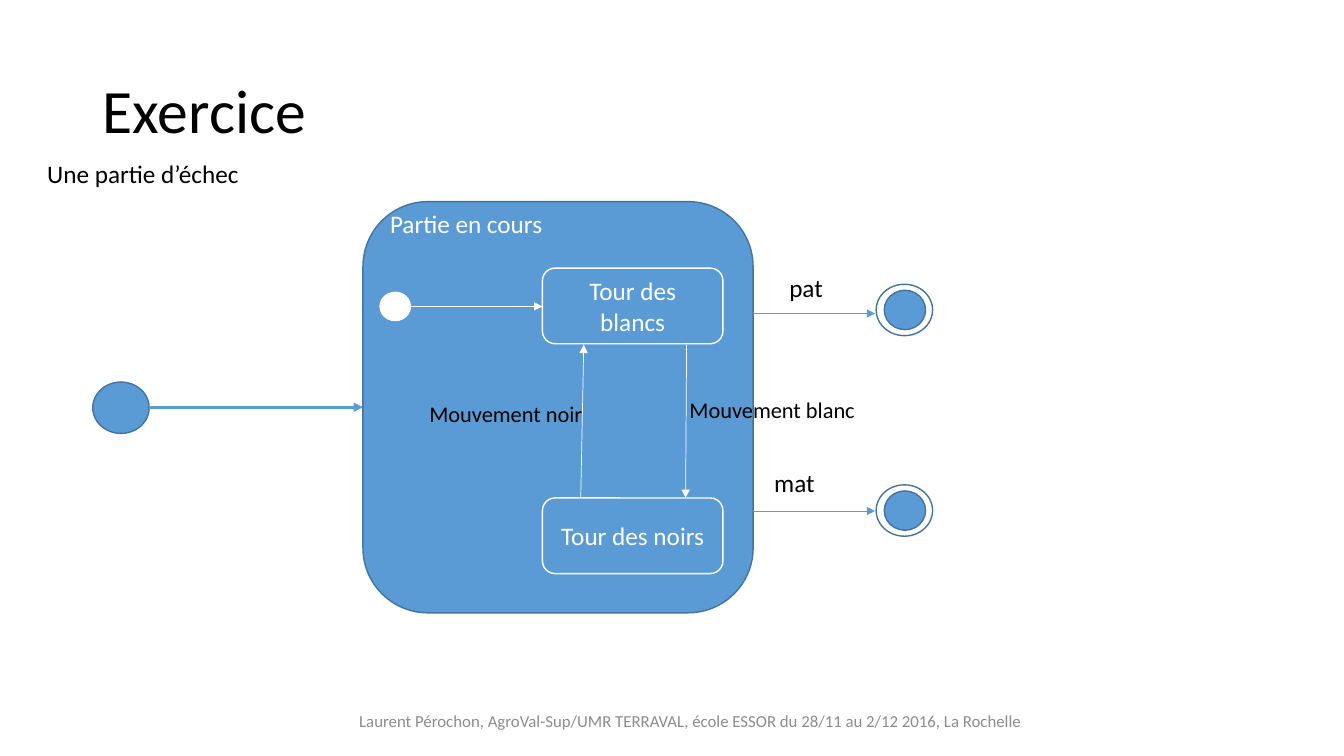
"""Build the slide with the state diagram of a chess game."""
import pptx
import pptx.dml.color
import pptx.enum.shapes
import pptx.enum.text
import pptx.oxml.ns
import pptx.util
from lxml import etree

Inches = pptx.util.Inches
SHAPE = pptx.enum.shapes.MSO_SHAPE
ALIGN = pptx.enum.text.PP_ALIGN
ANCHOR = pptx.enum.text.MSO_ANCHOR
BLUE, EDGE, WHITE, BLACK, GREY = "5B9BD5", "43739E", "FFFFFF", "000000", "8C8C8C"


def rgb(value):
    """Return the colour of a hex string."""
    return pptx.dml.color.RGBColor.from_string(value)


def set_all(obj, values):
    """Set each attribute of obj that the dict names."""
    for name, value in values.items():
        setattr(obj, name, value)


def write(sp, text, size, color, align=ALIGN.LEFT, anchor=ANCHOR.TOP, spacing=1.0):
    """Put one formatted paragraph into a shape."""
    tf = sp.text_frame
    set_all(tf, {"word_wrap": True, "vertical_anchor": anchor})
    p = tf.paragraphs[0]
    set_all(p, {"alignment": align, "line_spacing": spacing})
    r = p.add_run()
    r.text = text
    set_all(r.font, {"size": pptx.util.Pt(size), "name": "Calibri"})
    r.font.color.rgb = rgb(color)


def add_title(s, text, box):
    """Move and fill the title placeholder."""
    sp = s.shapes.title
    set_all(sp, dict(zip(("left", "top", "width", "height"), map(Inches, box))))
    write(sp, text, 44, BLACK, anchor=ANCHOR.MIDDLE, spacing=0.9)


def add_label(s, text, box, size=18, color=BLACK, **layout):
    """Add a text box."""
    write(s.shapes.add_textbox(*map(Inches, box)), text, size, color, **layout)


def add_node(s, kind, box, fill=BLUE, line=EDGE):
    """Add a preset shape, hollow when fill is None, and return it."""
    sp = s.shapes.add_shape(kind, *map(Inches, box))
    sp.shadow.inherit = False
    if fill:
        sp.fill.solid()
        sp.fill.fore_color.rgb = rgb(fill)
    else:
        sp.fill.background()
    sp.line.color.rgb = rgb(line)
    sp.line.width = pptx.util.Pt(1)
    return sp


def add_turn(s, text, top):
    """Add the state of one player's turn."""
    sp = add_node(s, SHAPE.ROUNDED_RECTANGLE, (5.38, top, 1.79, 0.75), line=WHITE)
    write(sp, text, 18, WHITE, ALIGN.CENTER, ANCHOR.MIDDLE)


def add_final(s, top):
    """Add a final state: a disc inside a ring."""
    add_node(s, SHAPE.OVAL, (8.77, top + 0.06, 0.41, 0.39))
    add_node(s, SHAPE.OVAL, (8.69, top, 0.56, 0.51), fill=None)


def add_arrow(s, ends, color, width=0.5):
    """Add a straight arrow from (x1, y1) to (x2, y2)."""
    cx = s.shapes.add_connector(pptx.enum.shapes.MSO_CONNECTOR.STRAIGHT, *map(Inches, ends))
    cx.line.color.rgb = rgb(color)
    cx.line.width = pptx.util.Pt(width)
    qn = pptx.oxml.ns.qn
    sppr = cx._element.spPr
    etree.SubElement(sppr.find(qn("a:ln")), qn("a:tailEnd"), type="triangle")
    etree.SubElement(sppr, qn("a:effectLst"))


def main():
    """Build and save the slide."""
    prs = pptx.Presentation()
    set_all(prs, {"slide_width": Inches(13.33), "slide_height": Inches(7.5)})
    s = prs.slides.add_slide(prs.slide_layouts[5])

    add_title(s, "Exercice", (0.92, 0.4, 11.5, 1.45))
    add_label(s, "Laurent Pérochon, AgroVal-Sup/UMR TERRAVAL, école ESSOR du 28/11 au 2/12 2016, La Rochelle",
              (2.3, 6.95, 9.1, 0.4), 12, GREY, align=ALIGN.CENTER, anchor=ANCHOR.MIDDLE)

    add_node(s, SHAPE.OVAL, (0.92, 3.79, 0.56, 0.51))
    add_arrow(s, (1.48, 4.04, 3.6, 4.04), BLUE, 2.25)
    add_node(s, SHAPE.ROUNDED_RECTANGLE, (3.6, 2, 3.87, 4.08))
    add_label(s, "Partie en cours", (3.77, 2.02, 2.26, 0.51), color=WHITE)

    add_node(s, SHAPE.OVAL, (3.77, 2.9, 0.3, 0.28), WHITE, WHITE)
    add_turn(s, "Tour des blancs", 2.66)
    add_turn(s, "Tour des noirs", 4.94)
    for ends in ((4.07, 3.04, 5.38, 3.04), (6.81, 3.42, 6.8, 4.94), (5.76, 4.94, 5.79, 3.42)):
        add_arrow(s, ends, WHITE)

    for text, box, y, top in (("pat", (7.73, 2.65, 0.7, 0.51), 3.11, 2.82),
                              ("mat", (7.58, 4.59, 0.79, 0.51), 5.07, 4.81)):
        add_label(s, text, box)
        add_arrow(s, (7.47, y, 8.68, y), BLUE)
        add_final(s, top)

    add_label(s, "Mouvement blanc", (6.74, 3.88, 2.43, 0.47), 16)
    add_label(s, "Mouvement noir", (4.16, 3.92, 2.28, 0.47), 16)
    add_label(s, "Une partie d’échec", (0.37, 1.52, 2.13, 0.4))
    prs.save("out.pptx")


if __name__ == "__main__":
    main()
